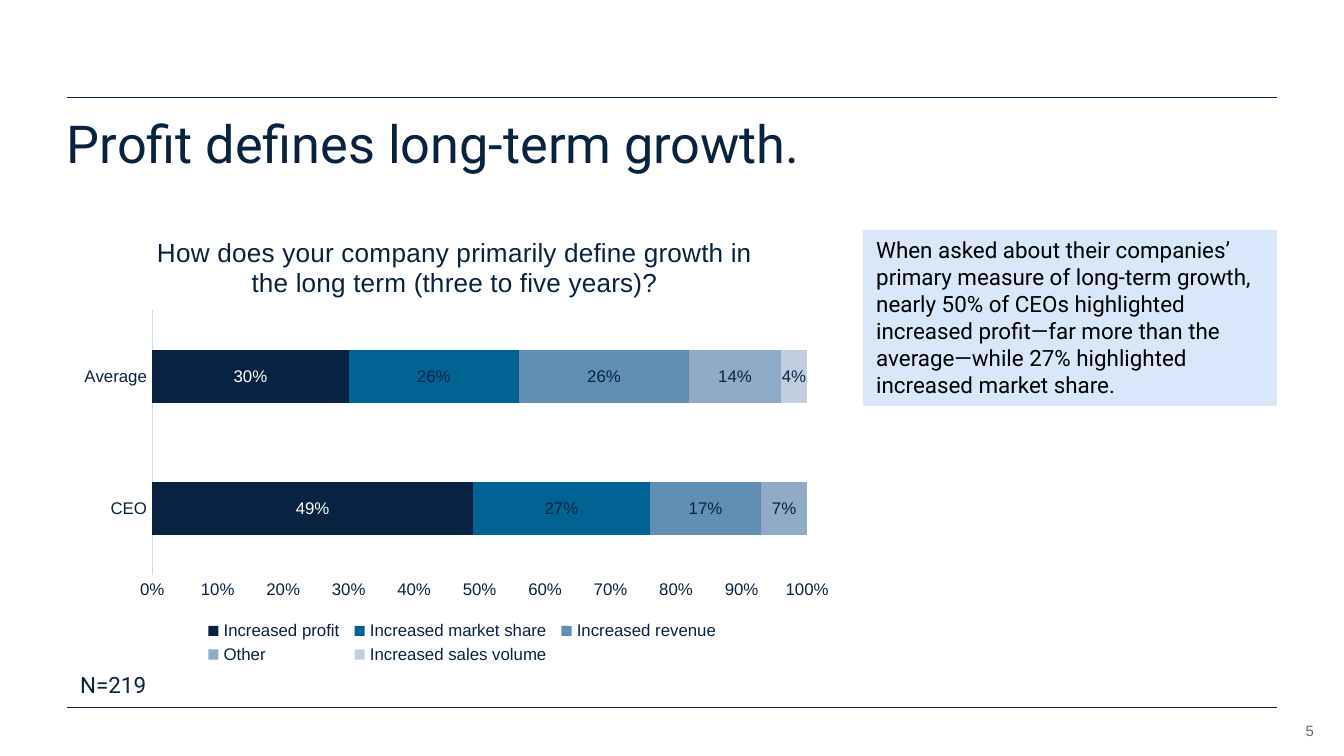
from lxml import etree
from pptx import Presentation
from pptx.chart.data import CategoryChartData
from pptx.dml.color import RGBColor
from pptx.enum.chart import XL_CHART_TYPE as ChartType
from pptx.enum.chart import XL_LABEL_POSITION as LabelPos
from pptx.enum.chart import XL_LEGEND_POSITION as LegendPos
from pptx.enum.chart import XL_TICK_MARK as TickMark
from pptx.enum.shapes import MSO_CONNECTOR as Connector
from pptx.enum.shapes import MSO_SHAPE as Shape
from pptx.enum.text import MSO_ANCHOR as Anchor
from pptx.enum.text import PP_ALIGN as Align
from pptx.oxml.ns import qn
from pptx.util import Pt

EMU_PER_PX = 6804
NAVY = RGBColor(0x08, 0x22, 0x41)
WHITE = RGBColor(0xFF, 0xFF, 0xFF)
BLACK = RGBColor(0, 0, 0)
GREY = RGBColor(0x66, 0x66, 0x66)
PALE_BLUE = RGBColor(0xD8, 0xE8, 0xFA)
AXIS_BLUE = RGBColor(0xC5, 0xDC, 0xF8)
OCEAN = RGBColor(0x00, 0x63, 0x93)
STEEL = RGBColor(0x61, 0x8E, 0xB3)
MIST = RGBColor(0x8F, 0xAB, 0xC8)
HAZE = RGBColor(0xC1, 0xCE, 0xDF)

LEFT, RIGHT = 67, 1277
CATEGORIES = ("CEO", "Average")
# Answer, shares per category, bar colour, label colour
ANSWERS = (
    ("Increased profit", (0.49, 0.30), NAVY, WHITE),
    ("Increased market share", (0.27, 0.26), OCEAN, NAVY),
    ("Increased revenue", (0.17, 0.26), STEEL, NAVY),
    ("Other", (0.07, 0.14), MIST, NAVY),
    ("Increased sales volume", (None, 0.04), HAZE, NAVY),
)


def px(*lengths):
    return [length * EMU_PER_PX for length in lengths]


def style_font(font, size, color, name="Arial"):
    font.size = Pt(size)
    font.name = name
    font.color.rgb = color
    font.bold = False


def write(frame, text, size, color, name="Roboto", align=Align.LEFT, anchor=Anchor.TOP, inset=True):
    frame.word_wrap = True
    frame.vertical_anchor = anchor
    if not inset:
        frame.margin_left = frame.margin_right = frame.margin_top = frame.margin_bottom = 0
    paragraph = frame.paragraphs[0]
    paragraph.alignment = align
    run = paragraph.add_run()
    run.text = text
    style_font(run.font, size, color, name)
    return paragraph


def add_rule(slide, y):
    rule = slide.shapes.add_connector(Connector.STRAIGHT, *px(LEFT, y, RIGHT, y))
    rule.line.color.rgb = NAVY
    rule.line.width = Pt(0.5)
    etree.SubElement(rule._element.spPr, qn("a:effectLst"))


def add_title(slide, text):
    title = slide.shapes.title
    title.left, title.top, title.width, title.height = px(LEFT, 118, RIGHT - LEFT, 74)
    write(title.text_frame, text, 28, NAVY, inset=False).line_spacing = 0.9


def add_callout(slide, text):
    callout = slide.shapes.add_shape(Shape.RECTANGLE, *px(863, 230, RIGHT - 863, 176))
    callout.shadow.inherit = False
    callout.fill.solid()
    callout.fill.fore_color.rgb = PALE_BLUE
    callout.line.fill.background()
    write(callout.text_frame, text, 12, BLACK)


def place_part(part, after, **fractions):
    """Fix a chart part's place as fractions of the chart area."""
    for old in part.findall(qn("c:layout")):
        part.remove(old)
    layout = etree.Element(qn("c:layout"))
    manual = etree.SubElement(layout, qn("c:manualLayout"))
    if after is None:
        etree.SubElement(manual, qn("c:layoutTarget")).set("val", "inner")
        part.insert(0, layout)
    else:
        part.find(qn(after)).addnext(layout)
    for side in ("x", "y"):
        etree.SubElement(manual, qn(f"c:{side}Mode")).set("val", "edge")
    for key, value in fractions.items():
        etree.SubElement(manual, qn(f"c:{key}")).set("val", str(value))


def style_axis(axis):
    axis.has_major_gridlines = False
    axis.major_tick_mark = axis.minor_tick_mark = TickMark.NONE
    style_font(axis.tick_labels.font, 9, NAVY)


def style_answers(plot):
    plot.gap_width, plot.overlap = 150, 100
    plot.vary_by_categories = False
    for series, (_, _, bar_color, label_color) in zip(plot.series, ANSWERS):
        series.format.fill.solid()
        series.format.fill.fore_color.rgb = bar_color
        labels = series.data_labels
        labels.show_value = True
        labels.position = LabelPos.CENTER
        labels.number_format, labels.number_format_is_linked = "0%", False
        style_font(labels.font, 9, label_color)


def add_growth_chart(slide, question):
    data = CategoryChartData(number_format="0%")
    data.categories = CATEGORIES
    for answer, shares, _, _ in ANSWERS:
        data.add_series(answer, shares)
    chart = slide.shapes.add_chart(
        ChartType.BAR_STACKED_100, *px(LEFT, 208, 775, 465), data).chart
    style_font(chart.font, 10, NAVY)

    chart.has_title = True
    write(chart.chart_title.text_frame, question, 14, NAVY, "Arial", Align.CENTER)
    chart.chart_title.include_in_layout = False

    style_axis(chart.category_axis)
    chart.category_axis.format.line.color.rgb = AXIS_BLUE
    chart.category_axis.format.line.width = Pt(0.75)
    shares_axis = chart.value_axis
    style_axis(shares_axis)
    shares_axis.format.line.fill.background()
    shares_axis.minimum_scale, shares_axis.maximum_scale = 0, 1
    shares_axis.major_unit = 0.1
    shares_axis.tick_labels.number_format = "0%"
    shares_axis.tick_labels.number_format_is_linked = False
    style_answers(chart.plots[0])

    chart.has_legend = True
    chart.legend.position = LegendPos.BOTTOM
    chart.legend.include_in_layout = False
    style_font(chart.legend.font, 9, NAVY)

    chart_xml = chart.element.find(qn("c:chart"))
    place_part(chart_xml.find(qn("c:title")), "c:tx", x=0.11, y=0.05)
    place_part(chart_xml.find(qn("c:plotArea")), None, x=0.11, y=0.22, w=0.845, h=0.57)
    place_part(chart_xml.find(qn("c:legend")), "c:legendPos", x=0.17, y=0.88, w=0.68, h=0.11)


def add_label(slide, box, *args, **kwargs):
    write(slide.shapes.add_textbox(*px(*box)).text_frame, *args, **kwargs)


def main():
    deck = Presentation()
    deck.slide_width, deck.slide_height = px(1344, 756)
    slide = deck.slides.add_slide(deck.slide_layouts[5])

    # Frame and page number
    for y in (97, 707):
        add_rule(slide, y)
    add_label(slide, (1251, 715, 63, 24), "5", 8, GREY, "Arial",
              Align.RIGHT, Anchor.BOTTOM, inset=False)

    # Heading and takeaway
    add_title(slide, "Profit defines long-term growth.")
    add_callout(slide, "When asked about their companies’ primary measure of long-term growth, "
                       "nearly 50% of CEOs highlighted increased profit—far more than the "
                       "average—while 27% highlighted increased market share.")

    # Survey results and sample size
    add_growth_chart(slide, "How does your company primarily define growth in "
                            "the long term (three to five years)?")
    add_label(slide, (LEFT, 665, 129, 40), "N=219", 12, NAVY)

    deck.save("out.pptx")


if __name__ == "__main__":
    main()
